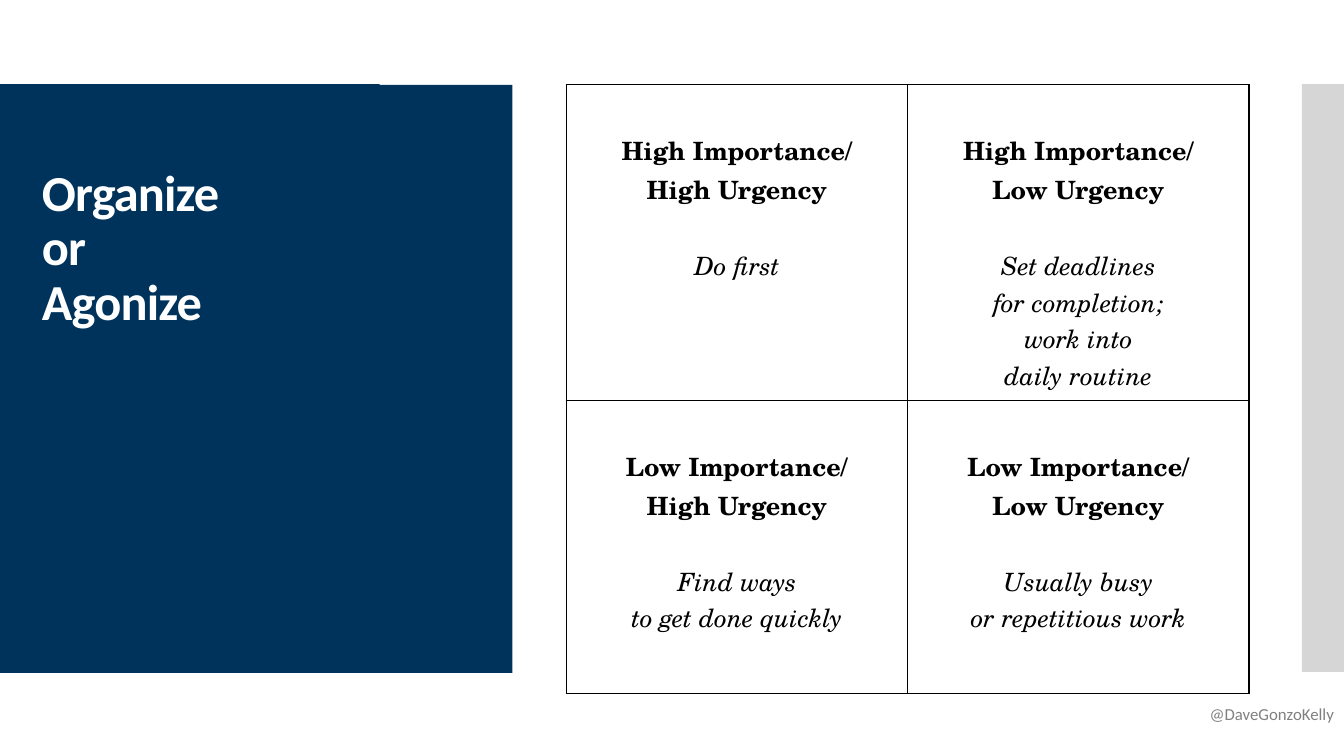
"""Builds the "Organize or Agonize" slide with its importance and urgency matrix."""
import copy
import dataclasses

import pptx
import pptx.dml.color
import pptx.enum.shapes
import pptx.enum.text
import pptx.oxml
import pptx.oxml.ns
import pptx.util

SLIDE_WIDTH = pptx.util.Inches(13.33)
SLIDE_HEIGHT = pptx.util.Inches(7.5)
GRID_COLUMNS, GRID_ROWS = 16, 9
ALIGN = pptx.enum.text.PP_ALIGN
MIDDLE = pptx.enum.text.MSO_ANCHOR.MIDDLE


@dataclasses.dataclass(frozen=True)
class TextStyle:
    font: str
    size: float
    color: str
    bold: bool = False
    italic: bool = False
    tracking: int = 0


@dataclasses.dataclass(frozen=True)
class Theme:
    navy: str = "00335B"
    silver: str = "D6D6D6"
    black: str = "000000"
    border_width: float = 1
    advice_gap: float = 27
    title: TextStyle = TextStyle("Calibri", 36, "FFFFFF", bold=True, tracking=-60)
    heading: TextStyle = TextStyle("TeX Gyre Schola", 18, "000000", bold=True)
    advice: TextStyle = TextStyle("TeX Gyre Schola", 18, "000000", italic=True)
    handle: TextStyle = TextStyle("Calibri", 12, "808080")


@dataclasses.dataclass(frozen=True)
class Area:
    column: float
    row: float
    columns: float
    rows: float

    def box(self) -> tuple[int, int, int, int]:
        """Return left, top, width and height of the area in EMU."""
        across, down = SLIDE_WIDTH / GRID_COLUMNS, SLIDE_HEIGHT / GRID_ROWS
        return (round(self.column * across), round(self.row * down),
                round(self.columns * across), round(self.rows * down))


@dataclasses.dataclass(frozen=True)
class Panel:
    area: Area
    color: str


@dataclasses.dataclass(frozen=True)
class Quadrant:
    heading: str
    advice: str


THEME = Theme()
PANELS = (
    Panel(Area(0, 1, 4.52, 7), THEME.navy),
    Panel(Area(15.5, 1, 0.5, 7), THEME.silver),
    Panel(Area(0, 1.01, 6.1, 7), THEME.navy),
)
TITLE_AREA = Area(0.38, 1.48, 5.27, 2.98)
MATRIX_AREA = Area(6.74, 1.01, 8.13, 6.98)
HANDLE_AREA = Area(0, 8, 16, 1)
MATRIX = (
    (Quadrant("High Importance/\nHigh Urgency", "Do first"),
     Quadrant("High Importance/\nLow Urgency",
              "Set deadlines\nfor completion;\nwork into\ndaily routine")),
    (Quadrant("Low Importance/\nHigh Urgency", "Find ways\nto get done quickly"),
     Quadrant("Low Importance/\nLow Urgency", "Usually busy\nor repetitious work")),
)


def rgb(color: str) -> pptx.dml.color.RGBColor:
    """Turn a hex string into a colour."""
    return pptx.dml.color.RGBColor.from_string(color)


def write(paragraph, text: str, style: TextStyle, align) -> None:
    """Fill a paragraph with text and format its runs and line breaks."""
    paragraph.text = text.replace("\n", "\v")
    paragraph.alignment = align
    for run in paragraph.runs:
        run.font.name = style.font
        run.font.size = pptx.util.Pt(style.size)
        run.font.bold = style.bold
        run.font.italic = style.italic
        run.font.color.rgb = rgb(style.color)
        if style.tracking:
            run.font._element.set("spc", str(style.tracking))
    for line_break in paragraph._p.findall(pptx.oxml.ns.qn("a:br")):
        line_break.append(copy.deepcopy(paragraph.runs[0].font._element))


def add_panel(slide, panel: Panel) -> None:
    """Draw a plain filled rectangle."""
    block = slide.shapes.add_shape(
        pptx.enum.shapes.MSO_SHAPE.RECTANGLE, *panel.area.box())
    block.shadow.inherit = False
    block.fill.solid()
    block.fill.fore_color.rgb = rgb(panel.color)
    block.line.fill.background()


def place_title(slide, text: str) -> None:
    """Move the title placeholder in front of the panels and format it."""
    title = slide.shapes.title
    title.left, title.top, title.width, title.height = TITLE_AREA.box()
    slide.shapes._spTree.append(title._element)
    frame = title.text_frame
    frame.word_wrap = True
    frame.vertical_anchor = MIDDLE
    write(frame.paragraphs[0], text, THEME.title, ALIGN.LEFT)
    frame.paragraphs[0].line_spacing = 0.9


def border_cell(cell) -> None:
    """Give a cell thin solid borders on all sides and no fill."""
    properties = cell._tc.get_or_add_tcPr()
    width = pptx.util.Pt(THEME.border_width)
    for side in ("lnL", "lnR", "lnT", "lnB"):
        properties.append(pptx.oxml.parse_xml(
            f'<a:{side} {pptx.oxml.ns.nsdecls("a")} w="{width}"><a:solidFill>'
            f'<a:srgbClr val="{THEME.black}"/></a:solidFill></a:{side}>'))
    cell.fill.background()


def fill_quadrant(cell, quadrant: Quadrant) -> None:
    """Write one quadrant's heading and advice."""
    cell.margin_left = cell.margin_right = pptx.util.Inches(0.15)
    cell.margin_top = pptx.util.Inches(0.46)
    cell.margin_bottom = pptx.util.Inches(0.07)
    border_cell(cell)
    frame = cell.text_frame
    write(frame.paragraphs[0], quadrant.heading, THEME.heading, ALIGN.CENTER)
    advice = frame.add_paragraph()
    write(advice, quadrant.advice, THEME.advice, ALIGN.CENTER)
    advice.space_before = pptx.util.Pt(THEME.advice_gap)


def add_matrix(slide) -> None:
    """Draw the importance and urgency table."""
    matrix = slide.shapes.add_table(
        len(MATRIX), len(MATRIX[0]), *MATRIX_AREA.box()).table
    matrix.first_row = matrix.horz_banding = False
    for row, quadrants in enumerate(MATRIX):
        for column, quadrant in enumerate(quadrants):
            fill_quadrant(matrix.cell(row, column), quadrant)


def add_handle(slide, text: str) -> None:
    """Write the speaker's handle along the bottom edge."""
    frame = slide.shapes.add_textbox(*HANDLE_AREA.box()).text_frame
    frame.word_wrap = True
    frame.vertical_anchor = MIDDLE
    write(frame.paragraphs[0], text, THEME.handle, ALIGN.RIGHT)
    frame.paragraphs[0].space_after = pptx.util.Pt(6)


def main() -> None:
    """Build and save the slide."""
    deck = pptx.Presentation()
    deck.slide_width, deck.slide_height = SLIDE_WIDTH, SLIDE_HEIGHT
    slide = deck.slides.add_slide(deck.slide_layouts.get_by_name("Title Only"))
    for panel in PANELS:
        add_panel(slide, panel)
    place_title(slide, "Organize\nor\nAgonize")
    add_matrix(slide)
    add_handle(slide, "@DaveGonzoKelly")
    deck.save("out.pptx")


if __name__ == "__main__":
    main()
